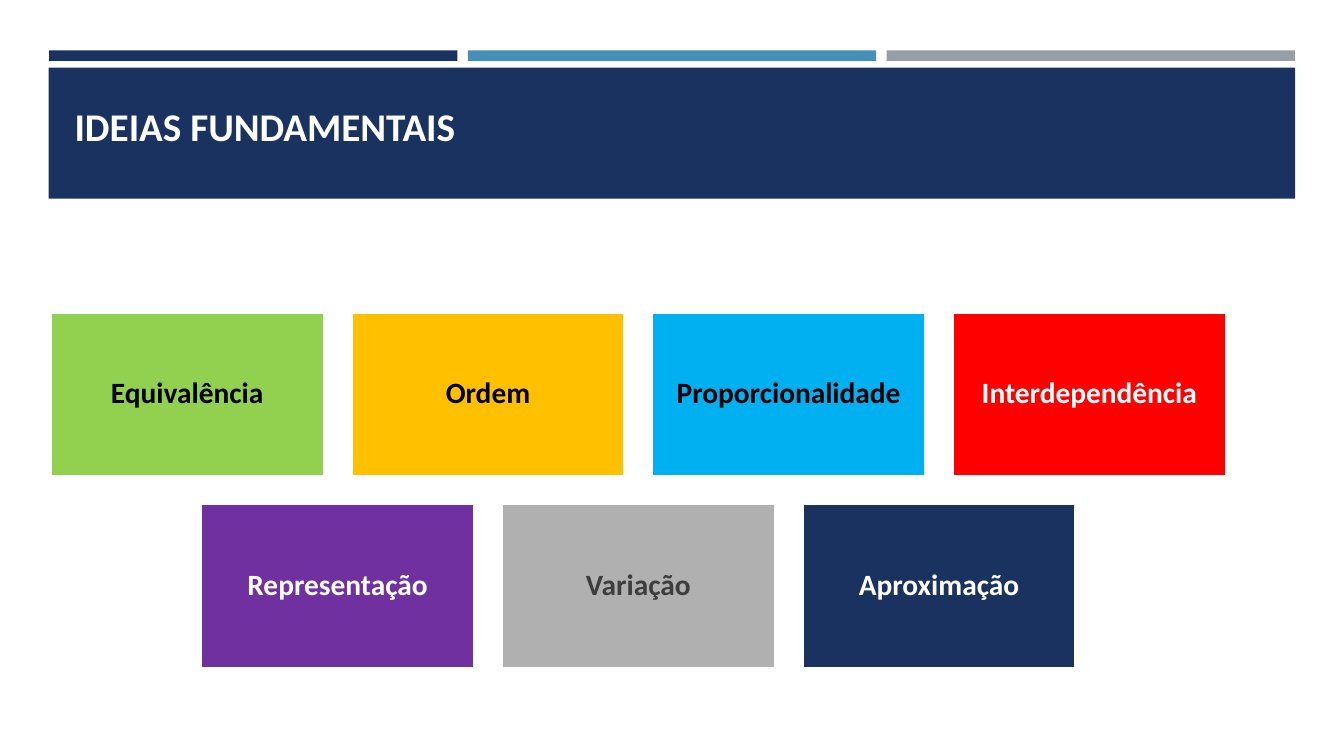
from pptx import Presentation
from pptx.dml.color import RGBColor
from pptx.enum.shapes import MSO_SHAPE as Shape
from pptx.enum.text import MSO_ANCHOR as Anchor, PP_ALIGN as Align
from pptx.util import Pt

NAVY, WHITE, BLACK = "1A3260", "FFFFFF", "000000"
BARS = [NAVY, "4590B8", "969FA7"]
ROWS = [
    [("Equivalência", "92D050", BLACK), ("Ordem", "FFC000", BLACK),
     ("Proporcionalidade", "00B0F0", BLACK), ("Interdependência", "FF0000", WHITE)],
    [("Representação", "7030A0", WHITE), ("Variação", "B0B0B0", "3D3D3D"),
     ("Aproximação", NAVY, WHITE)],
]
LEFT, TOP = 36.2, 223.2
TILE_W, TILE_H, GAP = 195.1, 117.1, 19.7


def paint(color, code):
    color.rgb = RGBColor.from_string(code)


def write(shape, text, size, color, align=Align.LEFT, anchor=Anchor.MIDDLE, space=1.0):
    frame = shape.text_frame
    frame.word_wrap = True
    frame.vertical_anchor = anchor
    para = frame.paragraphs[0]
    para.alignment = align
    para.line_spacing = space
    run = para.add_run()
    run.text = text
    run.font.name = "Calibri"
    run.font.size = Pt(size)
    run.font.bold = True
    paint(run.font.color, color)


def add_box(slide, left, top, width, height, fill, line=None):
    box = slide.shapes.add_shape(
        Shape.RECTANGLE, Pt(left), Pt(top), Pt(width), Pt(height))
    box.shadow.inherit = False
    box.fill.solid()
    paint(box.fill.fore_color, fill)
    if line:
        paint(box.line.color, line)
        box.line.width = Pt(1.75)
    else:
        box.line.fill.background()
    return box


def add_header(slide):
    for i, fill in enumerate(BARS):
        add_box(slide, 35.1 + i * 299.1, 36, 291.6, 7.5, fill)
    add_box(slide, 34.8, 48.3, 890.3, 93.6, NAVY)


def add_title(slide, text):
    title = slide.shapes.title
    title.left, title.top = Pt(46.1), Pt(55.4)
    title.width, title.height = Pt(868.3), Pt(54.7)
    write(title, text, 28, WHITE, anchor=Anchor.BOTTOM)
    # The title must lie in front of the banner.
    title.element.getparent().append(title.element)


def add_tile(slide, left, top, text, fill, color):
    tile = add_box(slide, left, top, TILE_W, TILE_H, fill, line=WHITE)
    frame = tile.text_frame
    frame.margin_left = frame.margin_right = Pt(6.3)
    frame.margin_top = frame.margin_bottom = Pt(6.3)
    write(tile, text, 21, color, align=Align.CENTER, space=0.9)


def add_tiles(slide):
    """Lay out the rows, each centred under the longest one."""
    step = TILE_W + GAP
    most = max(len(row) for row in ROWS)
    for r, row in enumerate(ROWS):
        start = LEFT + (most - len(row)) * step / 2
        for c, item in enumerate(row):
            add_tile(slide, start + c * step, TOP + r * (TILE_H + GAP), *item)


def main():
    deck = Presentation()
    deck.slide_width, deck.slide_height = Pt(960), Pt(540)
    slide = deck.slides.add_slide(deck.slide_layouts[5])
    add_header(slide)
    add_title(slide, "IDEIAS FUNDAMENTAIS")
    add_tiles(slide)
    deck.save("out.pptx")


if __name__ == "__main__":
    main()
